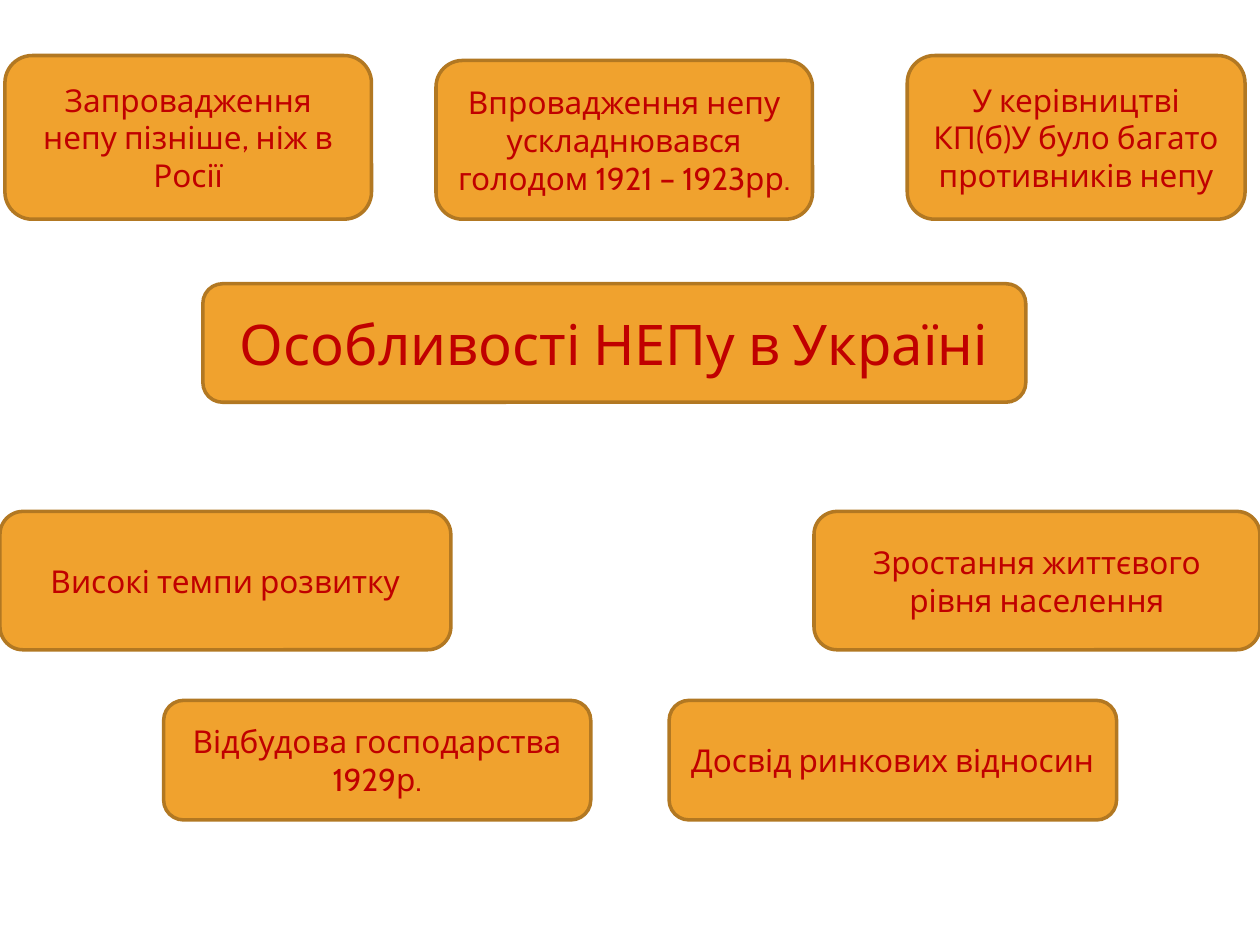
from dataclasses import dataclass

from pptx import Presentation
from pptx.dml.color import RGBColor
from pptx.enum.shapes import MSO_SHAPE as Preset
from pptx.enum.text import MSO_ANCHOR as Anchor, PP_ALIGN as Align
from pptx.util import Cm, Pt


@dataclass(frozen=True)
class Theme:
    fill: RGBColor = RGBColor.from_string("F0A22E")
    border: RGBColor = RGBColor.from_string("B27822")
    ink: RGBColor = RGBColor.from_string("C00000")
    font: str = "Cabin"
    title_size: int = 32
    card_size: int = 18
    border_width: int = 2


@dataclass(frozen=True)
class Box:
    left: float
    top: float
    width: float
    height: float


@dataclass(frozen=True)
class Card:
    offset: float
    width: float
    lines: tuple
    inset: float = 0


THEME = Theme()
SLIDE_WIDTH, SLIDE_HEIGHT = 25.4, 19.05

TITLE_BOX = Box(4.09, 5.72, 16.59, 2.39)
TITLE = "Особливості НЕПу в Україні"

CARD_ROWS = (
    (Box(0.1, 1.12, 25, 3.3), (
        Card(0, 7.39, ("Запровадження непу пізніше, ніж в Росії",)),
        Card(8.69, 7.59, ("Впровадження непу ускладнювався голодом 1921 – 1923рр.",), 0.1),
        Card(18.19, 6.81, ("У керівництві КП(б)У було багато противників непу",)),
    )),
    (Box(0, 10.31, SLIDE_WIDTH, 2.79), (
        Card(0, 9.09, ("Високі темпи розвитку",)),
        Card(16.41, 8.99, ("Зростання життєвого рівня населення",)),
    )),
    (Box(3.3, 14.12, 19.21, 2.41), (
        Card(0, 8.61, ("Відбудова господарства", "1929р.")),
        Card(10.19, 9.02, ("Досвід ринкових відносин",)),
    )),
)


def add_panel(page, box, lines, size):
    panel = page.shapes.add_shape(
        Preset.ROUNDED_RECTANGLE,
        Cm(box.left), Cm(box.top), Cm(box.width), Cm(box.height),
    )
    panel.shadow.inherit = False
    panel.fill.solid()
    panel.fill.fore_color.rgb = THEME.fill
    panel.line.color.rgb = THEME.border
    panel.line.width = Pt(THEME.border_width)

    frame = panel.text_frame
    frame.word_wrap = True
    frame.vertical_anchor = Anchor.MIDDLE
    for index, line in enumerate(lines):
        para = frame.add_paragraph() if index else frame.paragraphs[0]
        para.alignment = Align.CENTER
        span = para.add_run()
        span.text = line
        span.font.name = THEME.font
        span.font.size = Pt(size)
        span.font.color.rgb = THEME.ink


def add_title(page, box):
    add_panel(page, box, (TITLE,), THEME.title_size)


def add_card_row(page, box, cards):
    for card in cards:
        card_box = Box(
            box.left + card.offset, box.top + card.inset,
            card.width, box.height - card.inset,
        )
        add_panel(page, card_box, card.lines, THEME.card_size)


def main():
    deck = Presentation()
    deck.slide_width, deck.slide_height = Cm(SLIDE_WIDTH), Cm(SLIDE_HEIGHT)
    page = deck.slides.add_slide(deck.slide_layouts[6])
    add_title(page, TITLE_BOX)
    for box, cards in CARD_ROWS:
        add_card_row(page, box, cards)
    deck.save("out.pptx")


if __name__ == "__main__":
    main()
